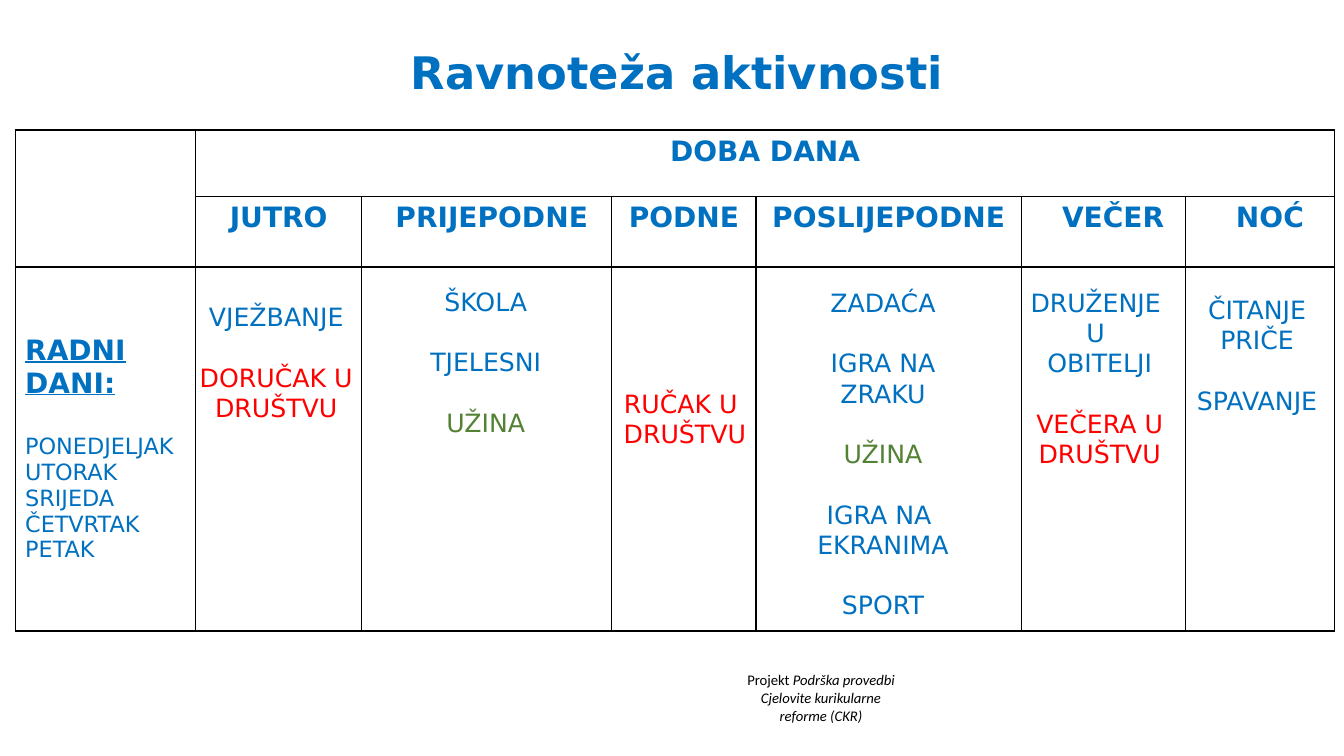
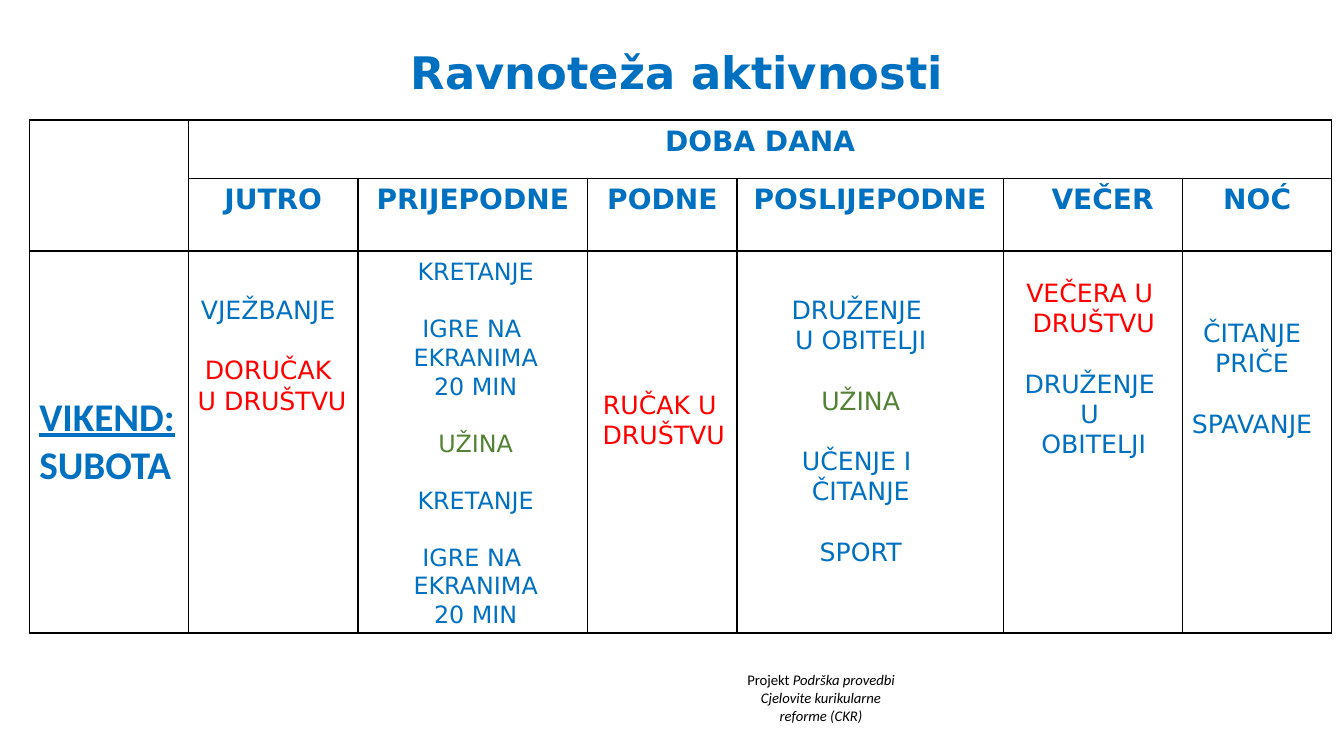
from pptx import Presentation
from pptx.dml.color import RGBColor
from pptx.enum import text as t
from pptx.oxml import parse_xml
from pptx.oxml.ns import nsdecls
from pptx.util import Pt

BLUE, RED, GREEN, BLACK = "0070C0", "FF0000", "548235", "000000"
SANS, BODY = "DejaVu Sans", "Calibri"
TITLE = "Ravnoteža aktivnosti"
SPAN = "DOBA DANA"
HEADS = ["JUTRO", "PRIJEPODNE", "PODNE", "POSLIJEPODNE", "VEČER", "NOĆ"]

# Groups of lines that appear on both days
LUNCH = [(RED, "RUČAK U ", "DRUŠTVU")]
SNACK = (GREEN, "UŽINA")
MOVE = [(BLUE, "KRETANJE"), (BLUE, "IGRE NA ", "EKRANIMA 20 MIN")]
NIGHT = [(BLUE, "ČITANJE", "PRIČE"), (BLUE, "SPAVANJE")]

# label: paragraphs of (size, font, bold, [(text, underline)])
# notes: (left, top, width, height), wrap, size, groups
DAYS = [
    dict(
        at=(10.8, 92.9),
        cols=[128.9, 118.8, 178.6, 103, 189.4, 117.4, 106.6],
        rows=[47.5, 50.4, 259.9],
        pads=[0, 7, 0, 0, 14, 14],
        label=[(20, SANS, True, [("RADNI DANI:", True)]),
               (16, SANS, False,
                [("PONEDJELJAK UTORAK SRIJEDA ČETVRTAK PETAK", False)])],
        notes=[
            ((133.2, 211.7, 128.2, 94.3), True, 18,
             [(BLUE, "VJEŽBANJE"), (RED, "DORUČAK U", "DRUŠTVU")]),
            ((437, 273.6, 104.4, 51.1), False, 18, LUNCH),
            ((295.9, 200.9, 102.2, 116.6), True, 18,
             [(BLUE, "ŠKOLA"), (BLUE, "TJELESNI"), SNACK]),
            ((574.6, 201.6, 112.3, 247), False, 18,
             [(BLUE, "ZADAĆA"), (BLUE, "IGRA NA", "ZRAKU"), SNACK,
              (BLUE, "IGRA NA ", "EKRANIMA"), (BLUE, "SPORT")]),
            ((726.5, 201.6, 118.1, 181.4), False, 18,
             [(BLUE, "DRUŽENJE ", "U ", "OBITELJI"),
              (RED, "VEČERA U", "DRUŠTVU")]),
            ((844.6, 206.6, 106.6, 94.3), False, 18, NIGHT),
        ]),
    dict(
        at=(20.9, 85.7),
        cols=[113.8, 121, 164.2, 106.6, 190.1, 128.2, 106.6],
        rows=[41.8, 51.8, 272.9],
        pads=[0, 0, 0, 0, 14, 0],
        label=[(28, BODY, True, [("VIKEND: ", True), ("SUBOTA", False)])],
        notes=[
            ((132.5, 206.6, 123.8, 94.3), False, 18,
             [(BLUE, "VJEŽBANJE "), (RED, "DORUČAK ", "U DRUŠTVU")]),
            ((421.9, 274.3, 104.4, 51.1), False, 18, LUNCH),
            ((283.7, 180, 112.3, 275), True, 17, MOVE + [SNACK] + MOVE),
            ((555.8, 206.6, 118.1, 203.8), False, 18,
             [(BLUE, "DRUŽENJE ", "U OBITELJI"), SNACK,
              (BLUE, "UČENJE I ", "ČITANJE"), (BLUE, "SPORT")]),
            ((722.2, 194.4, 118.1, 159.8), False, 18,
             [(RED, "VEČERA U ", "DRUŠTVU"),
              (BLUE, "DRUŽENJE ", "U ", "OBITELJI")]),
            ((841, 223.2, 106.6, 94.3), False, 18, NIGHT),
        ]),
]


def style(para, size, color=BLUE, bold=False, face=SANS, mid=True):
    font = para.font
    font.size, font.name, font.bold = Pt(size), face, bold
    font.color.rgb = RGBColor.from_string(color)
    para.alignment = t.PP_ALIGN.CENTER if mid else t.PP_ALIGN.LEFT


def line(frame, first):
    return frame.paragraphs[0] if first else frame.add_paragraph()


def add_box(slide, at, wrap):
    box = slide.shapes.add_textbox(*map(Pt, at))
    frame = box.text_frame
    frame.word_wrap = wrap
    frame.auto_size = t.MSO_AUTO_SIZE.SHAPE_TO_FIT_TEXT
    return box, frame


def add_note(slide, at, wrap, size, groups):
    frame = add_box(slide, at, wrap)[1]
    for g, (color, *lines) in enumerate(groups):
        for n, words in enumerate(lines):
            para = line(frame, g == n == 0)
            para.text = words
            if g and n == 0:
                para.space_before = Pt(size * 1.2)
            style(para, size, color)


def frame_cell(cell):
    cell.fill.background()
    props = cell._tc.get_or_add_tcPr()
    for n, side in enumerate(("lnL", "lnR", "lnT", "lnB")):
        props.insert(n, parse_xml(
            f'<a:{side} {nsdecls("a")} w="12700"><a:solidFill>'
            f'<a:srgbClr val="{BLACK}"/></a:solidFill></a:{side}>'))


def add_head(cell, words, pad=0):
    para = cell.text_frame.paragraphs[0]
    para.text = words
    style(para, 20, bold=True)
    cell.margin_left = Pt(7.2 + pad)


def add_grid(slide, day):
    cols, rows = day["cols"], day["rows"]
    size = (sum(cols), sum(rows))
    grid = slide.shapes.add_table(
        len(rows), len(cols), *map(Pt, day["at"] + size)).table
    grid.first_row = grid.horz_banding = False
    for col, width in zip(grid.columns, cols):
        col.width = Pt(width)
    for row, height in zip(grid.rows, rows):
        row.height = Pt(height)
    for cell in grid.iter_cells():
        frame_cell(cell)
    # Headings
    grid.cell(0, 0).merge(grid.cell(1, 0))
    grid.cell(0, 1).merge(grid.cell(0, len(cols) - 1))
    add_head(grid.cell(0, 1), SPAN)
    for c, (words, pad) in enumerate(zip(HEADS, day["pads"]), 1):
        add_head(grid.cell(1, c), words, pad)
    # Row label
    cell = grid.cell(2, 0)
    cell.vertical_anchor = t.MSO_ANCHOR.MIDDLE
    for n, (size, face, bold, runs) in enumerate(day["label"]):
        para = line(cell.text_frame, n == 0)
        for words, under in runs:
            run = para.add_run()
            run.text, run.font.underline = words, under
        if n:
            para.space_before = Pt(24)
        style(para, size, bold=bold, face=face, mid=False)


def add_foot(slide, layout):
    """Build the project line, then move it to the shared layout."""
    box, frame = add_box(slide, (503.3, 475.9, 166.3, 45.4), True)
    parts = [[("Projekt ", False), ("Podrška provedbi", True)],
             [("Cjelovite kurikularne\vreforme (CKR)", True)]]
    for n, runs in enumerate(parts):
        para = line(frame, n == 0)
        for words, slant in runs:
            for k, piece in enumerate(words.split("\v")):
                if k:
                    para.add_line_break()
                run = para.add_run()
                run.text, run.font.italic = piece, slant
        style(para, 10.5, BLACK, face=BODY)
    layout.shapes.element.append(box.element)


def add_title(slide):
    frame = slide.shapes.title.text_frame
    frame.vertical_anchor = t.MSO_ANCHOR.MIDDLE
    frame.auto_size = t.MSO_AUTO_SIZE.NONE
    para = frame.paragraphs[0]
    para.text = TITLE
    para.line_spacing = 0.9
    style(para, 32, bold=True)


def main():
    deck = Presentation()
    deck.slide_width, deck.slide_height = Pt(960), Pt(540)
    layout = deck.slide_layouts[5]
    head = layout.placeholders[0]
    head.left, head.top, head.width, head.height = map(
        Pt, (69.8, 41.8, 828, 23.8))
    for n, day in enumerate(DAYS):
        slide = deck.slides.add_slide(layout)
        if n == 0:
            add_foot(slide, layout)
        add_title(slide)
        add_grid(slide, day)
        for note in day["notes"]:
            add_note(slide, *note)
    deck.save("out.pptx")


if __name__ == "__main__":
    main()
